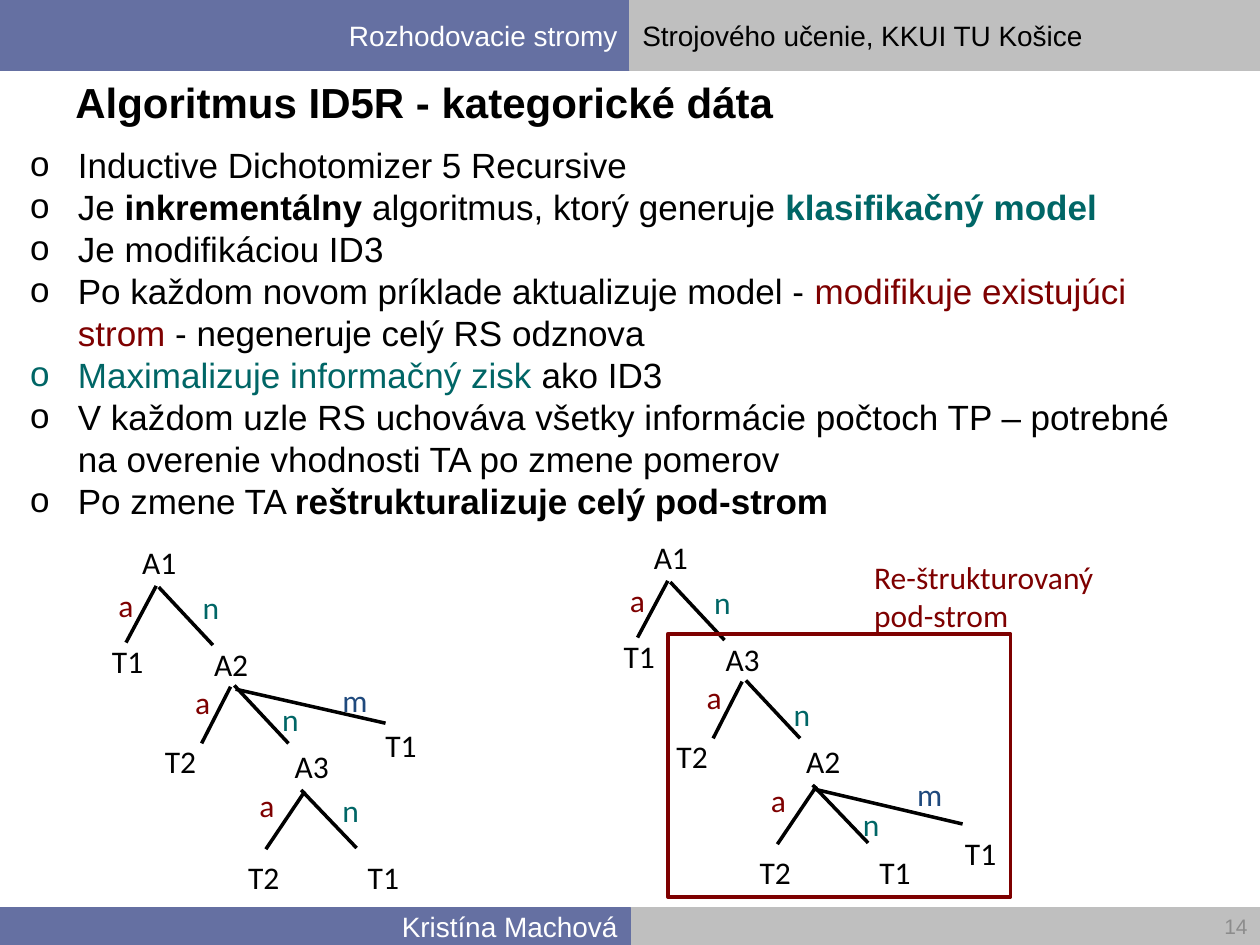
from typing import NamedTuple, Optional

from lxml import etree
from pptx import Presentation
from pptx import util as u
from pptx.dml.color import RGBColor
from pptx.enum import shapes, text
from pptx.oxml import ns

BLACK = RGBColor(0x00, 0x00, 0x00)
WHITE = RGBColor(0xFF, 0xFF, 0xFF)
BLUE = RGBColor(0x65, 0x70, 0xA2)
GREY = RGBColor(0xBF, 0xBF, 0xBF)
NUMBER_GREY = RGBColor(0x8C, 0x8C, 0x8C)
RED = RGBColor(0x7E, 0x00, 0x00)
TEAL = RGBColor(0x00, 0x66, 0x66)
NAVY = RGBColor(0x1F, 0x49, 0x7D)

LEFT, RIGHT = text.PP_ALIGN.LEFT, text.PP_ALIGN.RIGHT
TOP, MIDDLE = text.MSO_ANCHOR.TOP, text.MSO_ANCHOR.MIDDLE


class Box(NamedTuple):
    left: float
    top: float
    width: float
    height: float

    def lengths(self):
        return [u.Inches(value) for value in self]


class Run(NamedTuple):
    words: str
    color: RGBColor = BLACK
    bold: bool = False


class Style(NamedTuple):
    font: str
    size: float
    align: text.PP_ALIGN = LEFT
    anchor: text.MSO_ANCHOR = TOP
    wrap: bool = True
    bullet: Optional[str] = None
    spacing: Optional[float] = None


class Band(NamedTuple):
    box: Box
    color: RGBColor
    run: Optional[Run] = None
    align: text.PP_ALIGN = LEFT


class Edge(NamedTuple):
    x1: float
    y1: float
    x2: float
    y2: float


class Label(NamedTuple):
    words: str
    left: float
    top: float


class Tree(NamedTuple):
    dx: float
    dy: float
    edges: list[Edge]
    labels: list[Label]


TITLE = Style("Arial", 24, anchor=MIDDLE)
BODY = Style("Arial", 20, bullet="o", spacing=24)
NUMBER = Style("Arial", 12, RIGHT, MIDDLE)
TREE_TEXT = Style("Calibri", 18, wrap=False)

BANDS = [
    Band(Box(5, 7.2, 5, 0.3), GREY),
    Band(Box(0, 0, 5, 0.56), BLUE, Run("Rozhodovacie stromy", WHITE), RIGHT),
    Band(Box(5, 0, 5, 0.56), GREY, Run("Strojového učenie, KKUI TU Košice")),
    Band(Box(0, 7.2, 5, 0.3), BLUE, Run("Kristína Machová", WHITE), RIGHT),
]

POINTS = [
    [Run("Inductive Dichotomizer 5 Recursive")],
    [Run("Je "), Run("inkrementálny", bold=True), Run(" algoritmus, ktorý generuje "),
     Run("klasifikačný model", TEAL, True)],
    [Run("Je modifikáciou ID3")],
    [Run("Po každom novom príklade aktualizuje model - "),
     Run("modifikuje existujúci strom", RED), Run(" - negeneruje celý RS odznova")],
    [Run("Maximalizuje informačný zisk ", TEAL), Run("ako ID3")],
    [Run("V každom uzle RS uchováva všetky informácie počtoch TP – potrebné "
         "na overenie vhodnosti TA po zmene pomerov")],
    [Run("Po zmene TA "), Run("reštrukturalizuje celý pod-strom", bold=True)],
]

# Branch letters have their own colour and box width; nodes use the defaults.
BRANCH_COLORS = {"a": RED, "n": TEAL, "m": NAVY}
LABEL_WIDTHS = {"a": 0.32, "n": 0.34, "m": 0.4}

SHARED_EDGES = [
    Edge(1.24, 4.65, 1, 5.1), Edge(1.26, 4.66, 1.69, 5.12),
    Edge(1.83, 5.45, 1.6, 5.9), Edge(1.86, 5.44, 2.29, 5.9),
    Edge(2.42, 6.28, 2.11, 6.74), Edge(2.39, 6.27, 2.83, 6.73),
]
SHARED_LABELS = [
    Label("A1", 1.03, 4.26), Label("a", 0.84, 4.6), Label("n", 1.51, 4.62),
    Label("T1", 0.79, 5.05), Label("a", 1.45, 5.37), Label("n", 2.14, 5.51),
    Label("T2", 1.21, 5.84), Label("a", 1.96, 6.19), Label("T2", 1.87, 6.76),
    Label("T1", 2.82, 6.76),
]
TREES = [
    Tree(0, 0, [Edge(1.87, 5.47, 3.06, 5.74)],
         [Label("A2", 1.6, 5.07), Label("A3", 2.24, 5.88), Label("n", 2.62, 6.23),
          Label("T1", 2.96, 5.71), Label("m", 2.62, 5.36)]),
    Tree(4.06, -0.04, [Edge(2.39, 6.3, 3.58, 6.58)],
         [Label("A3", 1.6, 5.07), Label("A2", 2.24, 5.88), Label("n", 2.69, 6.38),
          Label("T1", 3.5, 6.61), Label("m", 3.12, 6.14)]),
]


def add_bullet(paragraph, character: str) -> None:
    properties = paragraph._p.get_or_add_pPr()
    properties.set("marL", str(u.Inches(0.38)))
    properties.set("indent", str(-u.Inches(0.38)))
    etree.SubElement(properties, ns.qn("a:buFont")).set("typeface", "Arial")
    etree.SubElement(properties, ns.qn("a:buChar")).set("char", character)


def write(frame, paragraphs: list[list[Run]], style: Style) -> None:
    frame.word_wrap = style.wrap
    frame.vertical_anchor = style.anchor
    for index, runs in enumerate(paragraphs):
        paragraph = frame.add_paragraph() if index else frame.paragraphs[0]
        paragraph.alignment = style.align
        if style.spacing:
            paragraph.line_spacing = u.Pt(style.spacing)
        if style.bullet:
            add_bullet(paragraph, style.bullet)
        for item in runs:
            run = paragraph.add_run()
            run.text = item.words
            run.font.name = style.font
            run.font.size = u.Pt(style.size)
            run.font.bold = item.bold
            run.font.color.rgb = item.color


def add_text(slide, box: Box, paragraphs: list[list[Run]], style: Style) -> None:
    write(slide.shapes.add_textbox(*box.lengths()).text_frame, paragraphs, style)


def add_rectangle(slide, box: Box, fill: Optional[RGBColor], line: RGBColor, weight: float):
    shape = slide.shapes.add_shape(shapes.MSO_SHAPE.RECTANGLE, *box.lengths())
    shape.shadow.inherit = False
    if fill is None:
        shape.fill.background()
    else:
        shape.fill.solid()
        shape.fill.fore_color.rgb = fill
    shape.line.color.rgb = line
    shape.line.width = u.Pt(weight)
    return shape


def add_edge(slide, edge: Edge, dx: float, dy: float) -> None:
    ends = (edge.x1 + dx, edge.y1 + dy, edge.x2 + dx, edge.y2 + dy)
    connector = slide.shapes.add_connector(
        shapes.MSO_CONNECTOR.STRAIGHT, *[u.Inches(value) for value in ends])
    connector.line.color.rgb = BLACK
    connector.line.width = u.Pt(2)
    etree.SubElement(connector._element.spPr, ns.qn("a:effectLst"))


def add_tree(slide, tree: Tree) -> None:
    for edge in SHARED_EDGES + tree.edges:
        add_edge(slide, edge, tree.dx, tree.dy)
    for label in SHARED_LABELS + tree.labels:
        box = Box(label.left + tree.dx, label.top + tree.dy,
                  LABEL_WIDTHS.get(label.words, 0.48), 0.4)
        run = Run(label.words, BRANCH_COLORS.get(label.words, BLACK))
        add_text(slide, box, [[run]], TREE_TEXT)


def main() -> None:
    presentation = Presentation()
    presentation.slide_width, presentation.slide_height = u.Inches(10), u.Inches(7.5)
    slide = presentation.slides.add_slide(presentation.slide_layouts[6])
    for band in BANDS:
        shape = add_rectangle(slide, band.box, band.color, band.color, 0.75)
        if band.run:
            write(shape.text_frame, [[band.run]], Style("Arial", 16, band.align, MIDDLE))
    add_text(slide, Box(0.5, 0.56, 9, 0.5),
             [[Run("Algoritmus ID5R - kategorické dáta", bold=True)]], TITLE)
    add_text(slide, Box(0.14, 1.09, 9.53, 3.26), POINTS, BODY)
    add_text(slide, Box(6.58, 7.2, 3.42, 0.3), [[Run("14", NUMBER_GREY)]], NUMBER)
    for tree in TREES:
        add_tree(slide, tree)
    add_rectangle(slide, Box(5.3, 5.03, 2.72, 2.09), None, RED, 2)
    add_text(slide, Box(6.84, 4.38, 1.96, 0.71),
             [[Run("Re-štrukturovaný", RED)], [Run("pod-strom", RED)]], TREE_TEXT)
    presentation.save("out.pptx")


if __name__ == "__main__":
    main()
